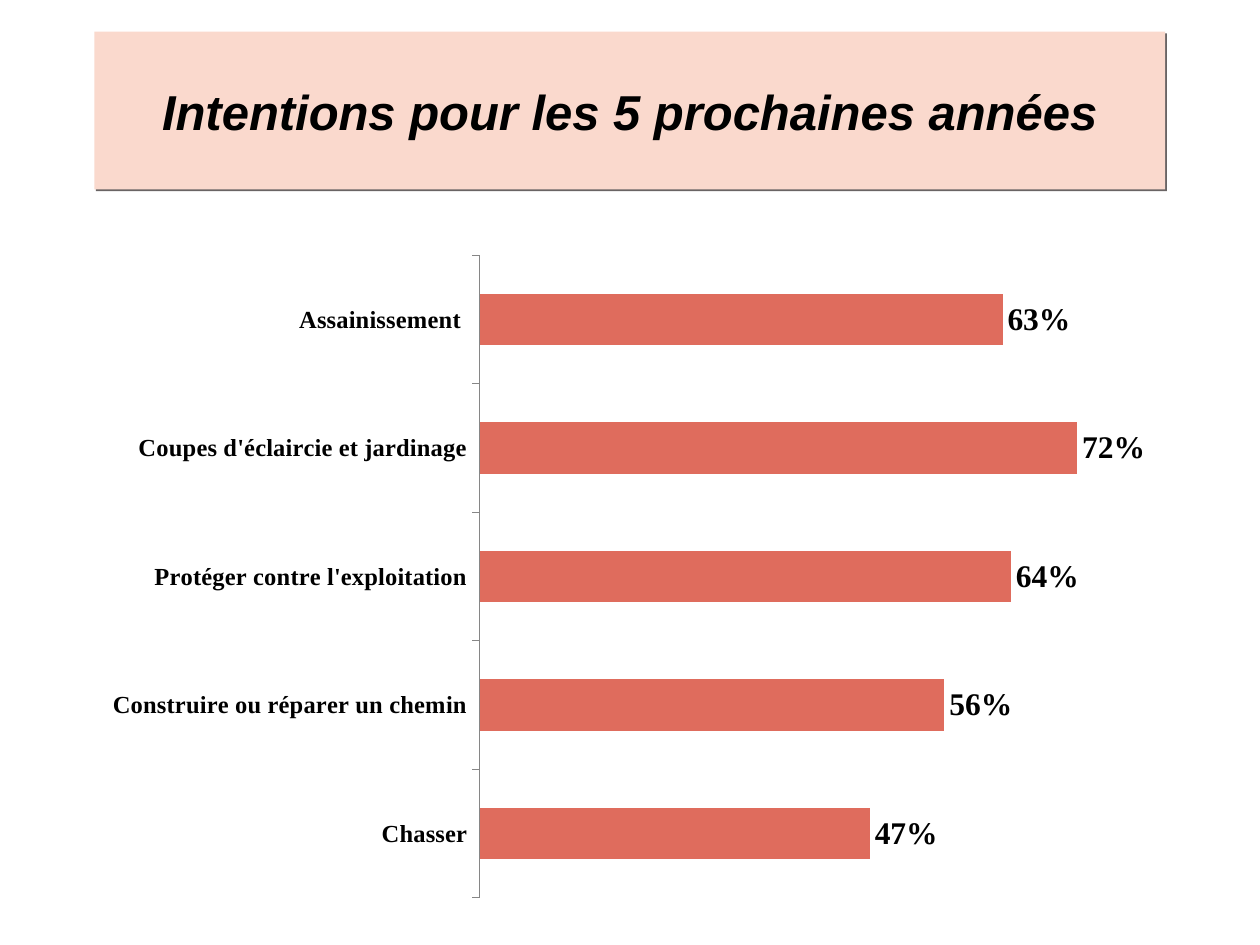
"""Build a slide with a bar chart of intentions for the next five years."""
import pptx
import pptx.chart.data
import pptx.dml.color
import pptx.enum.chart
import pptx.enum.text
import pptx.oxml
import pptx.oxml.ns
import pptx.util
from pptx.util import Cm

TITLE = "Intentions pour les 5 prochaines années"
INTENTIONS = [
    ("Chasser", 0.47),
    ("Construire ou réparer un chemin", 0.56),
    ("Protéger contre l'exploitation", 0.64),
    ("Coupes d'éclaircie et jardinage", 0.72),
    ("Assainissement ", 0.63),
]
LEFT, WIDTH = Cm(1.9), Cm(21.59)
PLOT_AREA = {"x": 0.36, "y": 0.02, "w": 0.62, "h": 0.96}


def color(hex_value):
    return pptx.dml.color.RGBColor.from_string(hex_value)


def paint(fill, hex_value):
    fill.solid()
    fill.fore_color.rgb = color(hex_value)


def format_font(font, name="Times New Roman", size=18, bold=False, italic=False):
    font.name, font.size = name, pptx.util.Pt(size)
    font.bold, font.italic = bold, italic
    font.color.rgb = color("000000")


def write_text(shape, text, **font_format):
    frame = shape.text_frame
    frame.word_wrap = True
    frame.auto_size = pptx.enum.text.MSO_AUTO_SIZE.NONE
    frame.vertical_anchor = pptx.enum.text.MSO_ANCHOR.MIDDLE
    paragraph = frame.paragraphs[0]
    paragraph.alignment = pptx.enum.text.PP_ALIGN.CENTER
    run = paragraph.add_run()
    run.text = text
    format_font(run.font, **font_format)


def add_shadow(shape, hex_value):
    shape.element.spPr.append(pptx.oxml.parse_xml(
        f'<a:effectLst {pptx.oxml.ns.nsdecls("a")}>'
        '<a:outerShdw dist="17780" dir="2700000" algn="ctr" rotWithShape="0">'
        f'<a:srgbClr val="{hex_value}"/></a:outerShdw></a:effectLst>'))


def place_plot(chart, area):
    plot_area = chart.element.find(".//" + pptx.oxml.ns.qn("c:plotArea"))
    for layout in plot_area.findall(pptx.oxml.ns.qn("c:layout")):
        plot_area.remove(layout)
    sizes = "".join(f'<c:{key} val="{value}"/>' for key, value in area.items())
    plot_area.insert(0, pptx.oxml.parse_xml(
        f'<c:layout {pptx.oxml.ns.nsdecls("c")}><c:manualLayout>'
        '<c:layoutTarget val="inner"/><c:xMode val="edge"/><c:yMode val="edge"/>'
        f'{sizes}</c:manualLayout></c:layout>'))


def add_title(slide):
    title = slide.shapes.title
    title.left, title.top, title.width, title.height = LEFT, Cm(0.64), WIDTH, Cm(3.18)
    paint(title.fill, "FAD9CD")
    title.line.fill.background()
    add_shadow(title, "696464")
    write_text(title, TITLE, name="Arial", size=28, bold=True, italic=True)


def add_intentions_chart(slide):
    chart_types = pptx.enum.chart
    data = pptx.chart.data.CategoryChartData(number_format="0%")
    data.categories = [label for label, share in INTENTIONS]
    data.add_series("Series 1", [share for label, share in INTENTIONS])
    chart = slide.shapes.add_chart(
        chart_types.XL_CHART_TYPE.BAR_CLUSTERED, LEFT, Cm(4.88), WIDTH, Cm(13.49), data).chart
    chart.has_title = chart.has_legend = False
    format_font(chart.font)
    place_plot(chart, PLOT_AREA)

    format_font(chart.category_axis.tick_labels.font, size=14, bold=True)
    chart.category_axis.major_tick_mark = chart_types.XL_TICK_MARK.OUTSIDE
    chart.category_axis.format.line.color.rgb = color("868686")
    chart.value_axis.visible = False
    chart.value_axis.has_major_gridlines = False
    chart.value_axis.minimum_scale, chart.value_axis.maximum_scale = 0, 0.8

    plot = chart.plots[0]
    plot.gap_width, plot.vary_by_categories = 150, False
    paint(plot.series[0].format.fill, "DF6C5D")
    labels = plot.series[0].data_labels
    labels.show_value = True
    labels.number_format, labels.number_format_is_linked = "0%", False
    labels.position = chart_types.XL_LABEL_POSITION.OUTSIDE_END
    format_font(labels.font, bold=True)


def main():
    presentation = pptx.Presentation()
    presentation.slide_width, presentation.slide_height = Cm(25.4), Cm(19.05)
    slide = presentation.slides.add_slide(presentation.slide_layouts.get_by_name("Title Only"))
    add_title(slide)
    add_intentions_chart(slide)
    presentation.save("out.pptx")


if __name__ == "__main__":
    main()
